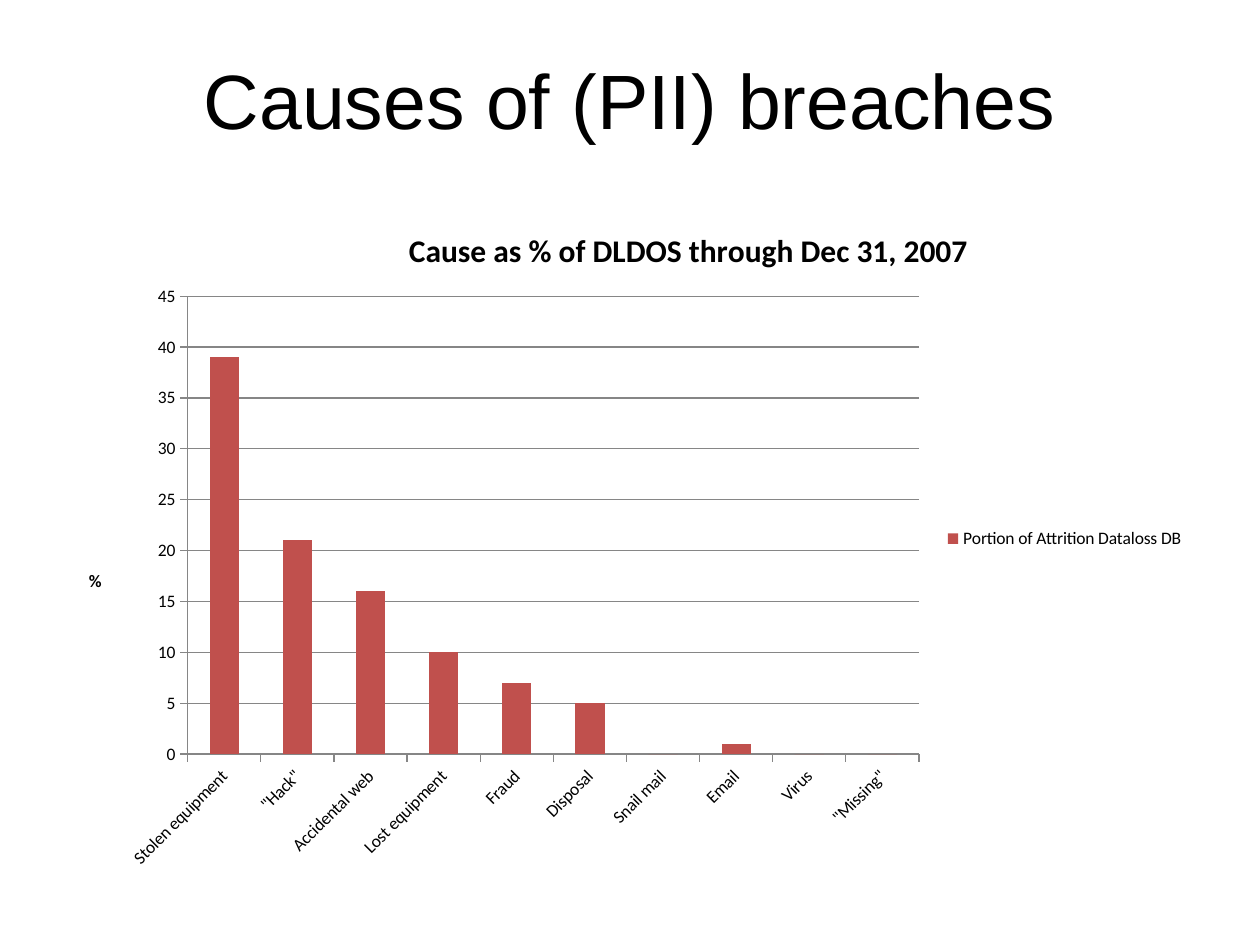
from dataclasses import dataclass

from lxml.etree import SubElement
from pptx import Presentation
from pptx.chart.data import CategoryChartData as ChartData
from pptx.dml.color import RGBColor
from pptx.enum.chart import XL_CHART_TYPE as Kind
from pptx.enum.chart import XL_LEGEND_POSITION as Side
from pptx.enum.chart import XL_TICK_MARK as Tick
from pptx.enum.text import MSO_ANCHOR as Anchor
from pptx.enum.text import PP_ALIGN as Align
from pptx.oxml.ns import qn
from pptx.util import Cm, Pt


@dataclass
class Cause:
    name: str
    share: int


CAUSES = [
    Cause("Stolen equipment", 39),
    Cause('"Hack"', 21),
    Cause("Accidental web", 16),
    Cause("Lost equipment", 10),
    Cause("Fraud", 7),
    Cause("Disposal", 5),
    Cause("Snail mail", 0),
    Cause("Email", 1),
    Cause("Virus", 0),
    Cause('"Missing"', 0),
]
BLACK, GRAY, RED = "000000", "868686", "C0504D"
LEFT, WIDTH = Cm(1.27), Cm(22.86)


def paint(target, color: str) -> None:
    """Give a fill or a line one solid colour."""
    target.solid()
    target.fore_color.rgb = RGBColor.from_string(color)


def style(font, name: str, size: float, bold: bool = False) -> None:
    font.name, font.size, font.bold = name, Pt(size), bold
    font.color.rgb = RGBColor.from_string(BLACK)


def place(part, **spots: float) -> None:
    """Set a manual layout, in fractions of the chart, on a chart part."""
    layout = part.find(qn("c:layout"))
    if layout is None:
        layout = SubElement(part, qn("c:layout"))
        text = part.find(qn("c:tx"))
        if text is None:
            part.insert(0, layout)
        else:
            text.addnext(layout)
    manual = SubElement(layout, qn("c:manualLayout"))
    if "w" in spots:
        SubElement(manual, qn("c:layoutTarget")).set("val", "inner")
    for key in ("x", "y"):
        SubElement(manual, qn(f"c:{key}Mode")).set("val", "edge")
    for key, spot in spots.items():
        SubElement(manual, qn(f"c:{key}")).set("val", str(spot))


def label(owner, text: str, size: float, x: float, y: float):
    """Write a bold title on a chart or axis, and return it."""
    title = owner.chart_title if hasattr(owner, "chart_title") else owner.axis_title
    run = title.text_frame.paragraphs[0].add_run()
    run.text = text
    style(run.font, "Calibri", size, True)
    place(title._element, x=x, y=y)
    return title


def add_title(slide, text: str) -> None:
    title = slide.shapes.title
    title.left, title.top = LEFT, Cm(0.76)
    title.width, title.height = WIDTH, Cm(3.18)
    frame = title.text_frame
    frame.vertical_anchor, frame.margin_top = Anchor.TOP, Cm(0.29)
    par = frame.paragraphs[0]
    par.alignment = Align.CENTER
    run = par.add_run()
    run.text = text
    style(run.font, "Arial", 44)


def add_causes(slide, causes: list[Cause]) -> None:
    data = ChartData()
    data.categories = [cause.name for cause in causes]
    data.add_series("Portion of Attrition Dataloss DB", [cause.share for cause in causes])
    chart = slide.shapes.add_chart(
        Kind.COLUMN_CLUSTERED, LEFT, Cm(3.94), WIDTH, Cm(13.84), data
    ).chart
    style(chart.font, "Calibri", 10)
    label(chart, "Cause as % of DLDOS through Dec 31, 2007", 18, 0.3, 0.04)
    place(chart._chartSpace.chart.plotArea, x=0.11, y=0.147, w=0.645, h=0.667)

    plot = chart.plots[0]
    plot.gap_width, plot.vary_by_categories = 150, False
    paint(plot.series[0].format.fill, RED)

    chart.has_legend = True
    chart.legend.position = Side.RIGHT
    chart.legend.include_in_layout = False

    names, scale = chart.category_axis, chart.value_axis
    scale.minimum_scale, scale.maximum_scale, scale.major_unit = 0, 45, 5
    scale.has_major_gridlines = True
    for line in (names.format.line, scale.format.line, scale.major_gridlines.format.line):
        paint(line.fill, GRAY)
        line.width = Pt(0.75)
    for axis in (names, scale):
        axis.major_tick_mark, axis.minor_tick_mark = Tick.OUTSIDE, Tick.NONE
        style(axis.tick_labels.font, "Calibri", 10)
    names._element.find(qn("c:txPr")).find(qn("a:bodyPr")).set("rot", "-2700000")
    unit = label(scale, "% ", 10, 0.02, 0.54)
    body = unit.text_frame._txBody.find(qn("a:bodyPr"))
    body.set("rot", "0")
    body.set("vert", "horz")


def main() -> None:
    deck = Presentation()
    deck.slide_width, deck.slide_height = Cm(25.4), Cm(19.05)
    slide = deck.slides.add_slide(deck.slide_layouts[5])
    paint(slide.background.fill, "FFFFFF")
    add_title(slide, "Causes of (PII) breaches")
    add_causes(slide, CAUSES)
    deck.save("out.pptx")


if __name__ == "__main__":
    main()
